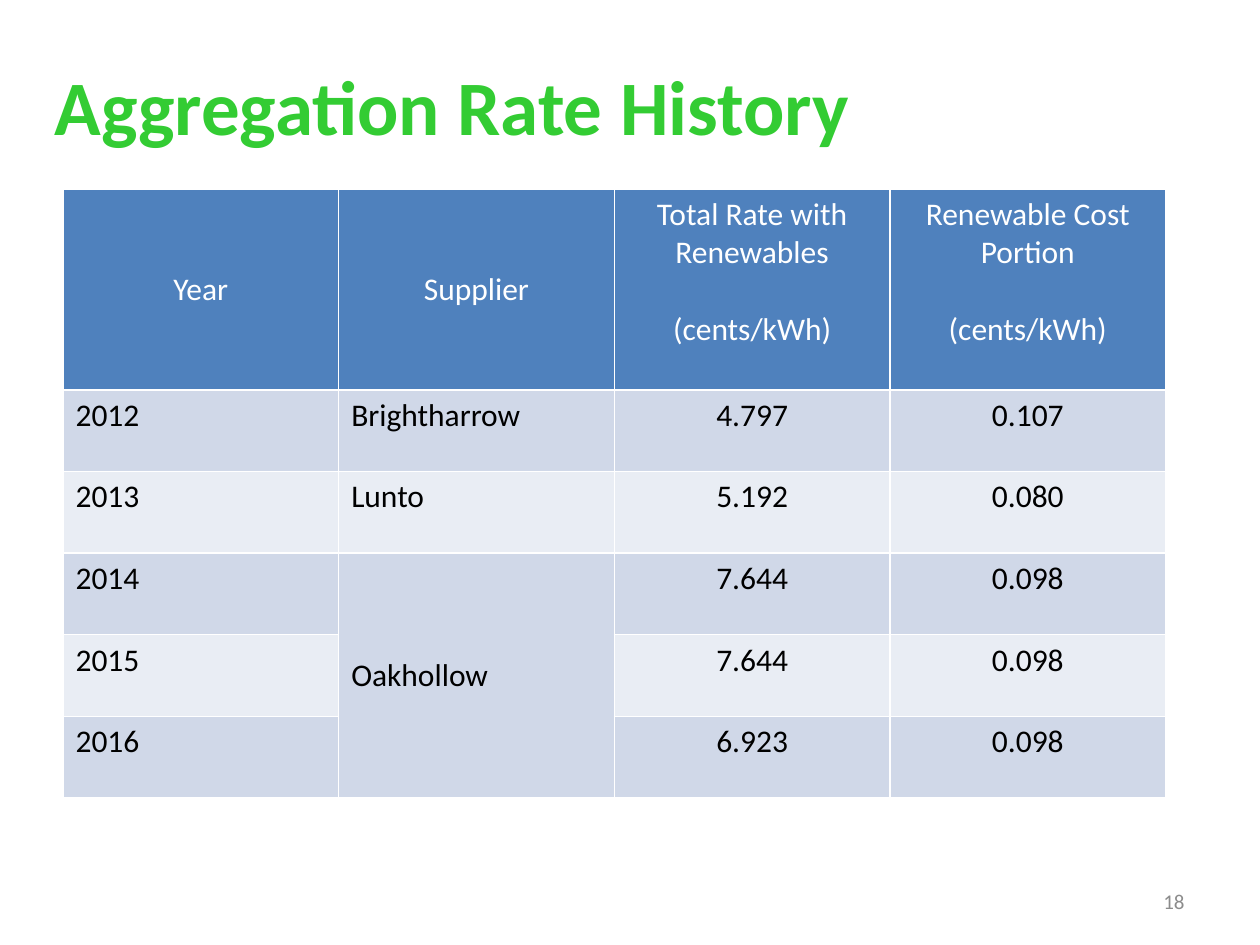
"""Build the aggregation rate history slide."""
from dataclasses import dataclass

import pptx
import pptx.dml.color
import pptx.enum.text
import pptx.util

Cm = pptx.util.Cm
Pt = pptx.util.Pt
ALIGN = pptx.enum.text.PP_ALIGN
ANCHOR = pptx.enum.text.MSO_ANCHOR


@dataclass(frozen=True)
class Theme:
    """Hold the colours, font and type sizes of the slide."""
    font: str = "Calibri"
    title: str = "33CC33"
    header: str = "4F81BD"
    bands: tuple = ("D0D8E8", "E9EDF4")
    light: str = "FFFFFF"
    dark: str = "000000"
    muted: str = "8C8C8C"
    title_size: int = 44
    body_size: int = 18
    number_size: int = 12
    unit_gap: int = 22


THEME = Theme()
UNIT = "(cents/kWh)"
HEADINGS = [
    ["Year"],
    ["Supplier"],
    ["Total Rate with Renewables", UNIT],
    ["Renewable Cost Portion", UNIT],
]
RATES = [
    ("2012", "Brightharrow", "4.797", "0.107"),
    ("2013", "Lunto", "5.192", "0.080"),
    ("2014", "Oakhollow", "7.644", "0.098"),
    ("2015", "", "7.644", "0.098"),
    ("2016", "", "6.923", "0.098"),
]
SUPPLIER = 1
SHARED_ROWS = (3, 5)


def rgb(value):
    """Turn a hex string into a colour."""
    return pptx.dml.color.RGBColor.from_string(value)


def write(frame, *lines, size=THEME.body_size, color=THEME.dark, bold=False,
          align=ALIGN.LEFT, gap=0):
    """Write each line as a formatted paragraph."""
    for index, line in enumerate(lines):
        paragraph = frame.add_paragraph() if index else frame.paragraphs[0]
        paragraph.alignment = align
        if index:
            paragraph.space_before = Pt(gap)
        run = paragraph.add_run()
        run.text = line
        run.font.name = THEME.font
        run.font.size = Pt(size)
        run.font.bold = bold
        run.font.color.rgb = rgb(color)


def add_label(slide, text, left, top, width, height, anchor=ANCHOR.TOP, **style):
    """Add a wrapped text box."""
    frame = slide.shapes.add_textbox(Cm(left), Cm(top), Cm(width), Cm(height)).text_frame
    frame.word_wrap = True
    frame.vertical_anchor = anchor
    write(frame, text, **style)


def fill_cell(cell, *lines, fill, anchor=ANCHOR.TOP, **style):
    """Colour a table cell and write its lines."""
    cell.fill.solid()
    cell.fill.fore_color.rgb = rgb(fill)
    cell.vertical_anchor = anchor
    if any(lines):
        write(cell.text_frame, *lines, **style)


def add_rate_table(slide):
    """Add the table of yearly rates by supplier."""
    rates = slide.shapes.add_table(
        len(RATES) + 1, len(HEADINGS), Cm(1.27), Cm(3.81), Cm(22.23), Cm(12.27)).table
    rates.rows[0].height = Cm(4.05)
    for column, heading in enumerate(HEADINGS):
        fill_cell(rates.cell(0, column), *heading, fill=THEME.header,
                  color=THEME.light, align=ALIGN.CENTER, gap=THEME.unit_gap,
                  anchor=ANCHOR.MIDDLE if len(heading) == 1 else ANCHOR.TOP)
    for row, values in enumerate(RATES, start=1):
        rates.rows[row].height = Cm(1.645)
        for column, value in enumerate(values):
            shared = column == SUPPLIER and row >= SHARED_ROWS[0]
            fill_cell(rates.cell(row, column), value,
                      fill=THEME.bands[(row - 1) % 2],
                      align=ALIGN.CENTER if column > SUPPLIER else ALIGN.LEFT,
                      anchor=ANCHOR.MIDDLE if shared else ANCHOR.TOP)
    first, last = SHARED_ROWS
    rates.cell(first, SUPPLIER).merge(rates.cell(last, SUPPLIER))


def main():
    """Build and save the slide."""
    deck = pptx.Presentation()
    deck.slide_width, deck.slide_height = Cm(25.4), Cm(19.05)
    slide = deck.slides.add_slide(deck.slide_layouts[6])
    add_label(slide, "18", 18.2, 17.66, 5.93, 1.01, anchor=ANCHOR.MIDDLE,
              size=THEME.number_size, color=THEME.muted, align=ALIGN.RIGHT)
    add_label(slide, "Aggregation Rate History", 0.85, 1.06, 23.44, 2.14,
              size=THEME.title_size, color=THEME.title, bold=True)
    add_rate_table(slide)
    deck.save("out.pptx")


if __name__ == "__main__":
    main()
